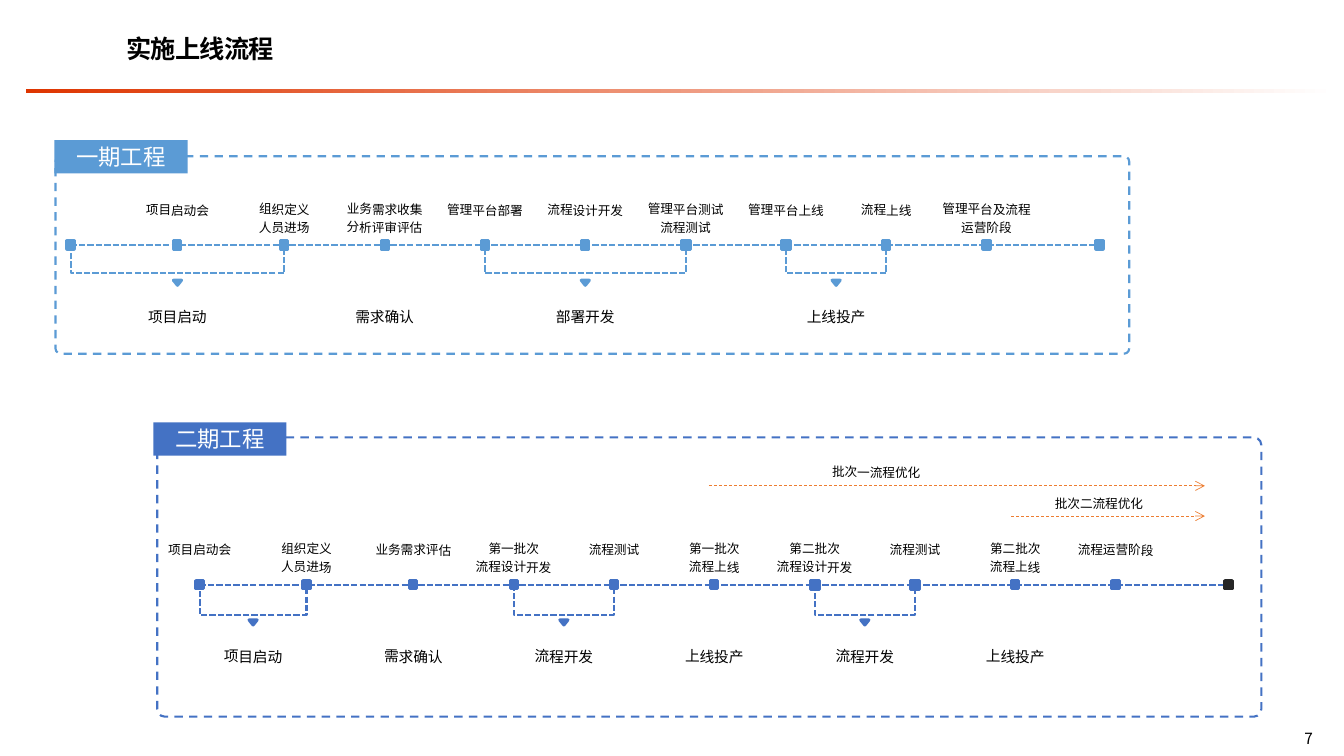
"""Builds the slide on the two-phase go-live process."""
from itertools import accumulate

from lxml.etree import SubElement
from pptx import Presentation
from pptx.dml.color import RGBColor
from pptx.enum.dml import MSO_LINE as Dash
from pptx.enum.shapes import MSO_CONNECTOR as Link, MSO_SHAPE as Kind
from pptx.enum.text import MSO_ANCHOR as Anchor, PP_ALIGN as Align
from pptx.oxml.ns import qn
from pptx.util import Inches, Pt

TITLE = "实施上线流程"
PAGE_NUMBER = "7"
CJK = "Noto Sans CJK SC"
BLACK, WHITE, RED, ORANGE = "000000", "FFFFFF", "DE3500", "ED7D31"
STOP_GAPS = [1.06] * 2 + [0.995] * 7 + [1.12]

PHASES = [
    {
        "name": "二期工程", "color": "4472C4", "end_color": "262626",
        "first_stop": 1.98, "axis": 5.8, "bracket_depth": 0.27, "large_stops": (6, 7),
        "frame": (1.56, 4.34, 10.95, 2.77), "badge": (1.52, 4.19),
        "first_label": 0,
        "labels": ["项目启动会", "组织定义\n人员进场", "业务需求评估", "第一批次\n流程设计开发",
                   "流程测试", "第一批次\n流程上线", "第二批次\n流程设计开发", "流程测试",
                   "第二批次\n流程上线", "流程运营阶段"],
        "steps": [("项目启动", 0, 1), ("需求确认", 2, 2), ("流程开发", 3, 4),
                  ("上线投产", 5, 5), ("流程开发", 6, 7), ("上线投产", 8, 8)],
    },
    {
        "name": "一期工程", "color": "5B9BD5", "end_color": "5B9BD5",
        "first_stop": 0.7, "axis": 2.43, "bracket_depth": 0.25, "large_stops": (6, 7),
        "frame": (0.55, 1.55, 10.65, 1.96), "badge": (0.54, 1.39),
        "first_label": 1,
        "labels": ["项目启动会", "组织定义\n人员进场", "业务需求收集\n分析评审评估", "管理平台部署",
                   "流程设计开发", "管理平台测试\n流程测试", "管理平台上线", "流程上线",
                   "管理平台及流程\n运营阶段"],
        "steps": [("项目启动", 0, 2), ("需求确认", 3, 3), ("部署开发", 4, 6),
                  ("上线投产", 7, 8)],
    },
]
OPTIMISATIONS = [("批次一流程优化", 8.69, 4.53, 7.03, 4.82),
                 ("批次二流程优化", 10.9, 4.84, 10.03, 5.12)]
OPTIMISATION_END = 11.95


def rgb(color):
    """Turn a hex string into a colour."""
    return RGBColor.from_string(color)


def add_run(paragraph, text, size, color=BLACK, font=CJK):
    """Add one formatted run, with its East Asian font."""
    run = paragraph.add_run()
    run.text = text
    run.font.size = Pt(size)
    run.font.name = font
    run.font.color.rgb = rgb(color)
    SubElement(run.font._element, qn("a:ea")).set("typeface", CJK)
    return run


def add_preset(slide, kind, box, fill=None, line=None, width=2.25):
    """Add a flat preset shape."""
    preset = slide.shapes.add_shape(kind, *map(Inches, box))
    preset.shadow.inherit = False
    if fill:
        preset.fill.solid()
        preset.fill.fore_color.rgb = rgb(fill)
    else:
        preset.fill.background()
    if line:
        preset.line.color.rgb = rgb(line)
        preset.line.width = Pt(width)
    else:
        preset.line.fill.background()
    return preset


def add_line(slide, start, end, color, width=1.5, dash=Dash.SQUARE_DOT, kind=Link.STRAIGHT):
    """Add a dashed connector without shadow."""
    link = slide.shapes.add_connector(kind, *map(Inches, start + end))
    link.line.color.rgb = rgb(color)
    link.line.width = Pt(width)
    link.line.dash_style = dash
    SubElement(link._element.spPr, qn("a:effectLst"))
    return link


def add_bracket(slide, left, right, top, depth, color):
    """Add an elbow connector that hangs below two stops."""
    middle, half, thin = (left + right) / 2, (right - left) / 2, 0.01
    bracket = add_line(slide, (middle - thin / 2, top - half), (middle + thin / 2, top + half),
                       color, kind=Link.ELBOW)
    properties = bracket._element.spPr
    properties.find(qn("a:xfrm")).set("rot", str(90 * 60000))
    guides = properties.find(qn("a:prstGeom")).find(qn("a:avLst"))
    guide = SubElement(guides, qn("a:gd"))
    guide.set("name", "adj1")
    guide.set("fmla", f"val {round(depth / thin * 100000)}")


def add_label(slide, text, center, top, width, size, rotation=0.5):
    """Add a centred label, one paragraph a line."""
    lines = text.split("\n")
    height = 0.09 + len(lines) * size * 0.02
    label = slide.shapes.add_textbox(*map(Inches, (center - width / 2, top, width, height)))
    label.rotation = rotation
    frame = label.text_frame
    frame.word_wrap = True
    for index, line in enumerate(lines):
        paragraph = frame.add_paragraph() if index else frame.paragraphs[0]
        paragraph.alignment = Align.CENTER
        paragraph.line_spacing = 1.2
        add_run(paragraph, line, size)


def add_phase(slide, phase):
    """Draw the timeline of one phase inside its frame."""
    color, axis = phase["color"], phase["axis"]
    stops = list(accumulate(STOP_GAPS, initial=phase["first_stop"]))
    add_line(slide, (stops[0], axis), (stops[-1], axis), color)
    for index, stop in enumerate(stops):
        width, height = (0.09, 0.09) if index in phase["large_stops"] else (0.07, 0.08)
        fill = phase["end_color"] if stop == stops[-1] else color
        add_preset(slide, Kind.RECTANGLE,
                   (stop - width / 2, axis - height / 2, width, height), fill, fill)
    for stop, text in zip(stops[phase["first_label"]:], phase["labels"]):
        add_label(slide, text, stop, axis - (0.51 if "\n" in text else 0.5),
                  1.11 if "及" in text else 1.01, 9)
    for text, first, last in phase["steps"]:
        center = (stops[first] + stops[last]) / 2
        add_label(slide, text, center, axis + 0.54, 1.34, 10.5)
        if first != last:
            add_bracket(slide, stops[first], stops[last], axis + 0.04,
                        phase["bracket_depth"], color)
            pointer = add_preset(slide, Kind.ISOSCELES_TRIANGLE,
                                 (center - 0.04, axis + 0.35, 0.08, 0.05), color, color)
            pointer.rotation = 180
    border = add_preset(slide, Kind.ROUNDED_RECTANGLE, phase["frame"], None, color, 1.5)
    border.adjustments[0] = 0.027
    border.line.dash_style = Dash.DASH
    badge = add_preset(slide, Kind.RECTANGLE, phase["badge"] + (1.32, 0.33), color)
    badge.text_frame.vertical_anchor = Anchor.MIDDLE
    heading = badge.text_frame.paragraphs[0]
    heading.alignment = Align.CENTER
    add_run(heading, phase["name"], 16, WHITE, "Arial")


def main():
    """Build and save the slide."""
    deck = Presentation()
    deck.slide_width, deck.slide_height = Inches(13.33), Inches(7.5)
    slide = deck.slides.add_slide(deck.slide_layouts[5])

    title = slide.shapes.title
    title.left, title.top, title.width, title.height = map(Inches, (1.15, 0.14, 11.51, 0.69))
    title.text_frame.vertical_anchor = Anchor.MIDDLE
    title.text_frame.paragraphs[0].alignment = Align.LEFT
    title_run = add_run(title.text_frame.paragraphs[0], TITLE, 18)
    title_run.font.bold = True
    title_run.font._element.set("spc", "-50")

    rule = add_preset(slide, Kind.RECTANGLE, (0.26, 0.88, 12.99, 0.04))
    rule.fill.gradient()
    rule.fill.gradient_angle = 0
    for stop, color in zip(rule.fill.gradient_stops, (RED, WHITE)):
        stop.color.rgb = rgb(color)
    add_label(slide, PAGE_NUMBER, 12.98, 7.15, 1.28, 11, 0)

    for phase in PHASES:
        add_phase(slide, phase)
    for text, center, top, start, level in OPTIMISATIONS:
        arrow = add_line(slide, (start, level), (OPTIMISATION_END, level), ORANGE, 0.5, Dash.DASH)
        SubElement(arrow.line._get_or_add_ln(), qn("a:tailEnd")).set("type", "arrow")
        add_label(slide, text, center, top, 1.34, 9)

    deck.save("out.pptx")


if __name__ == "__main__":
    main()
